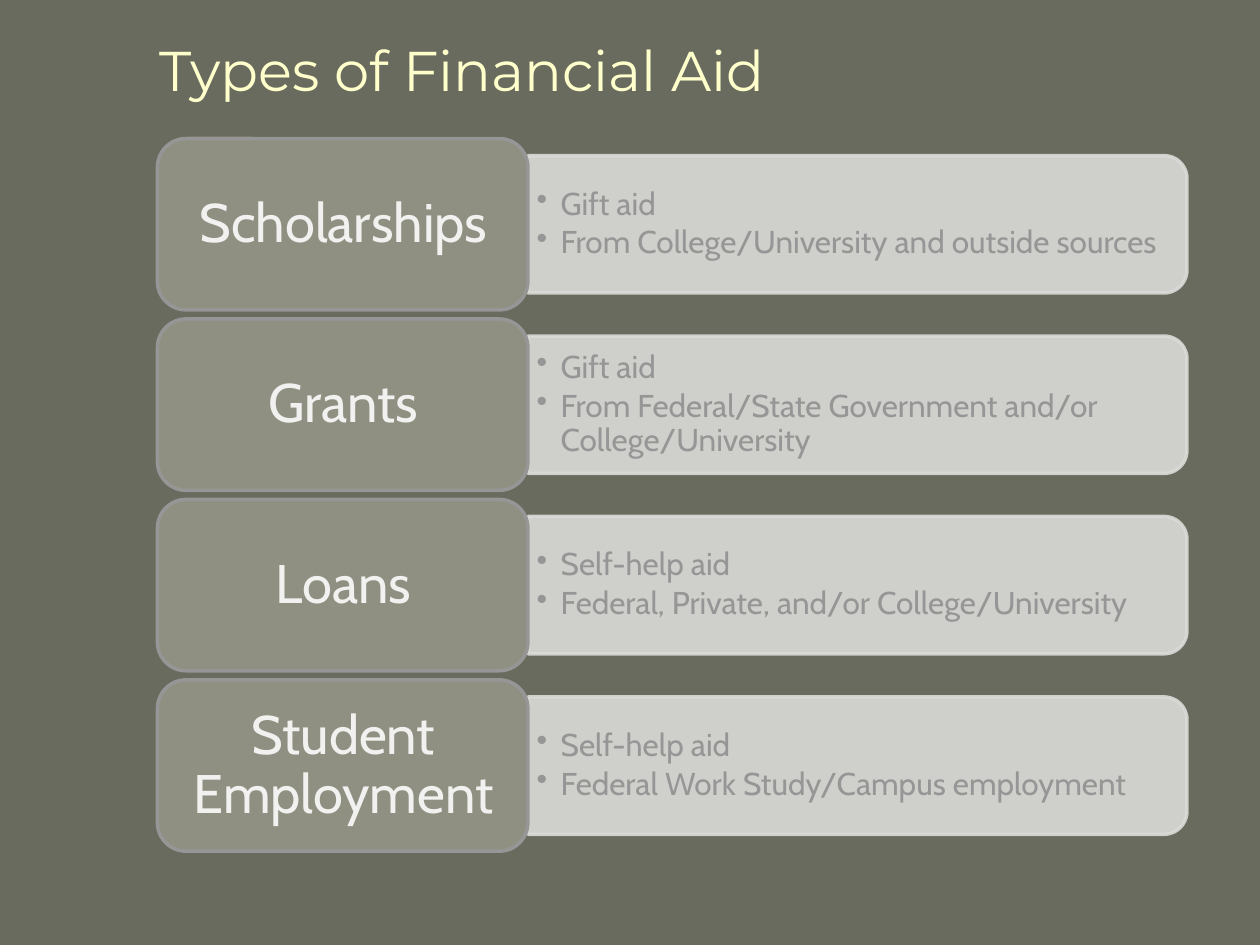
"""Build a slide that lists four types of financial aid."""
import pptx
import pptx.dml.color
import pptx.enum.shapes
import pptx.enum.text
import pptx.oxml
import pptx.oxml.ns
import pptx.util
import lxml.etree

RGB = pptx.dml.color.RGBColor
BACK = RGB(0x68, 0x6B, 0x5D)
CREAM = RGB(0xFF, 0xFF, 0xCC)
PALE = RGB(0xDB, 0xDB, 0xD8)
OLIVE = RGB(0x90, 0x90, 0x82)
GREY = RGB(0x96, 0x96, 0x96)
WHITE = RGB(0xF1, 0xF1, 0xF0)
KIND = pptx.enum.shapes.MSO_SHAPE
ALIGN = pptx.enum.text.PP_ALIGN
qn = pptx.oxml.ns.qn

deck = pptx.Presentation()
deck.slide_width = pptx.util.Inches(10)
deck.slide_height = pptx.util.Inches(7.5)
COL = deck.slide_width / 10
ROW = deck.slide_height / 7.5
slide = deck.slides.add_slide(deck.slide_layouts[6])
slide.background.fill.solid()
slide.background.fill.fore_color.rgb = BACK


def add_text(home, area, lines, face, size, color, pad, gap=0, align=ALIGN.LEFT, mark=False):
    x, y, w, h = area
    box = home.add_textbox(int(x * COL), int(y * ROW), int(w * COL), int(h * ROW))
    frame = box.text_frame
    frame.word_wrap = True
    frame.vertical_anchor = pptx.enum.text.MSO_ANCHOR.MIDDLE
    frame.margin_left = frame.margin_right = int(pad[0] * COL)
    frame.margin_top = frame.margin_bottom = int(pad[1] * ROW)
    for num, line in enumerate(lines):
        para = frame.add_paragraph() if num else frame.paragraphs[0]
        para.alignment = align
        if gap:
            para.line_spacing = 0.9
            para.space_after = pptx.util.Pt(gap)
        if mark:
            props = para._p.get_or_add_pPr()
            props.set("marL", str(int(0.19 * COL)))
            props.set("indent", str(int(-0.19 * COL)))
            lxml.etree.SubElement(props, qn("a:buChar")).set("char", "•")
        run = para.add_run()
        run.text = line
        run.font.name = face
        run.font.size = pptx.util.Pt(size)
        run.font.color.rgb = color


def add_block(home, kind, area, fill, edge):
    x, y, w, h = area
    block = home.add_shape(kind, int(x * COL), int(y * ROW), int(w * COL), int(h * ROW))
    block.shadow.inherit = False
    block.fill.solid()
    block.fill.fore_color.rgb = fill
    block.line.color.rgb = edge
    block.line.width = pptx.util.Pt(2)
    return block


add_text(slide.shapes, (1.17, 0.17, 7.83, 0.75), ["Types of Financial Aid"],
         "Montserrat", 32, CREAM, (0.1, 0.05))

AID = [
    ("Scholarships", ["Gift aid", "From College/University and outside sources"]),
    ("Grants", ["Gift aid", "From Federal/State Government and/or College/University"]),
    ("Loans", ["Self-help aid", "Federal, Private, and/or College/University"]),
    ("Student Employment", ["Self-help aid", "Federal Work Study/Campus employment"]),
]
LEFT, TOP, STEP = 1.25, 1.1, 1.432
WIDE, HIGH = 2.94, 1.36
LONG, THICK = 5.23, 1.09

group = slide.shapes.add_group_shape().shapes
for num, (name, notes) in enumerate(AID):
    top = TOP + num * STEP
    mid = top + HIGH / 2
    edge = LEFT + WIDE
    panel = add_block(group, KIND.ROUND_2_SAME_RECTANGLE,
                      (edge + (LONG - THICK) / 2, mid - LONG / 2, THICK, LONG), PALE, PALE)
    panel.rotation = 90
    for tint in panel._element.spPr.iter(qn("a:srgbClr")):
        lxml.etree.SubElement(tint, qn("a:alpha")).set("val", "90000")
    add_text(group, (edge, mid - 0.49, 5.17, 0.98), notes,
             "Cabin", 18, GREY, (0.07, 0.04), 2.7, mark=True)
    add_block(group, KIND.ROUNDED_RECTANGLE, (LEFT, top, WIDE, HIGH), OLIVE, GREY)
    add_text(group, (LEFT + 0.07, top + 0.07, WIDE - 0.13, HIGH - 0.13), [name],
             "Cabin", 31, WHITE, (0.13, 0.06), 10.85, ALIGN.CENTER)

deck.save("out.pptx")
